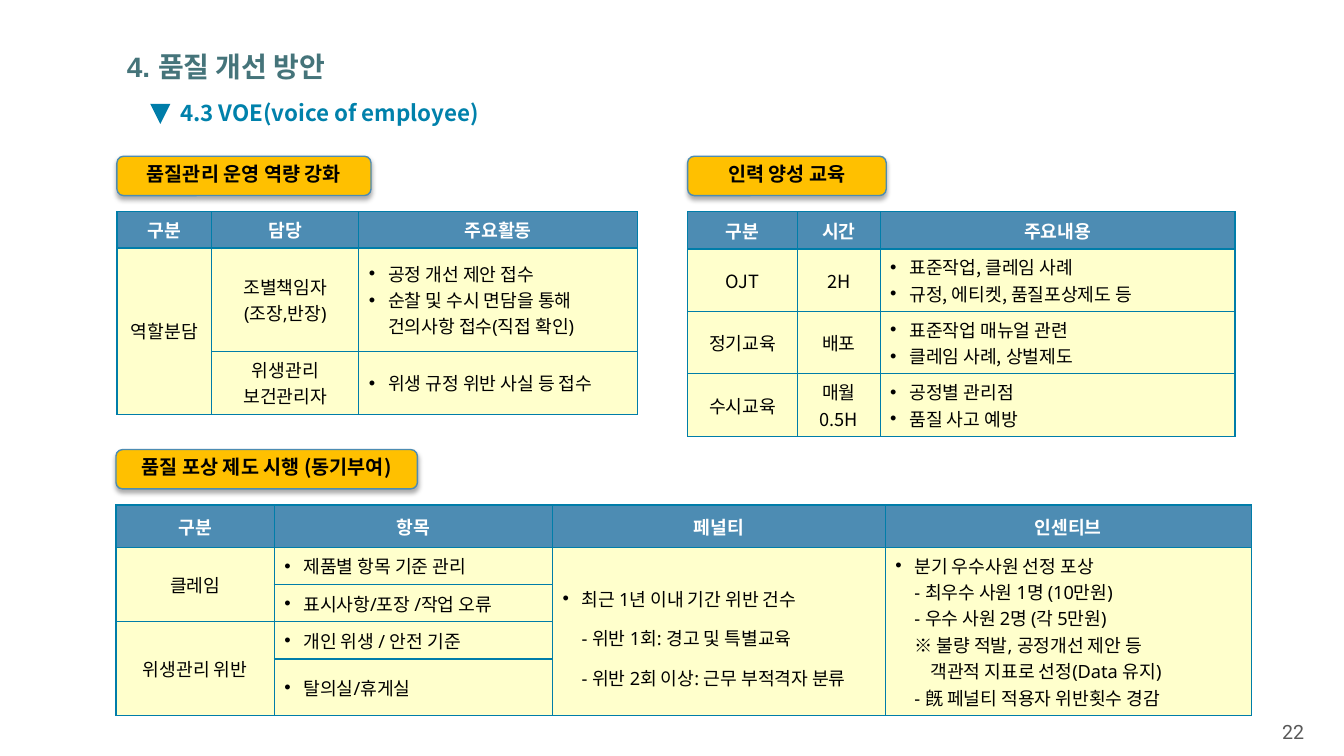
import pptx
import pptx.util
import pptx.dml.color
import pptx.enum.shapes
import pptx.enum.text
import pptx.oxml
import pptx.oxml.ns
import lxml.etree as etree

Inches = pptx.util.Inches
Pt = pptx.util.Pt
ALIGN = pptx.enum.text.PP_ALIGN
ANCHOR = pptx.enum.text.MSO_ANCHOR
SHAPE = pptx.enum.shapes.MSO_SHAPE
qn = pptx.oxml.ns.qn

COLORS = {
    "title": "45747A", "topic": "0081AB", "mark": "007DA9", "edge": "007DA9",
    "head": "4D8CB3", "body": "FFFFCC", "pill": "FFC000", "ink": "000000",
    "light": "FFFFFF", "page": "595959",
}
CJK = "Noto Sans CJK KR"
LATIN = "Noto Sans"
STEP = 0.19  # bullet indent
# Indents of the lines under a bullet, by their leading sign
LEVELS = {"•": STEP, ">": STEP, "»": 0.35}

DUTIES = [
    ["구분", "담당", "주요활동"],
    ["역할분담", "조별책임자\n(조장,반장)",
     "•공정 개선 제안 접수\n•순찰 및 수시 면담을 통해\v건의사항 접수(직접 확인)"],
    ["", "위생관리\n보건관리자", "•위생 규정 위반 사실 등 접수"],
]
COURSES = [
    ["구분", "시간", "주요내용"],
    ["OJT", "2H", "•표준작업, 클레임 사례\n•규정, 에티켓, 품질포상제도 등"],
    ["정기교육", "배포", "•표준작업 매뉴얼 관련\n•클레임 사례, 상벌제도"],
    ["수시교육", "매월\n0.5H", "•공정별 관리점\n•품질 사고 예방"],
]
AWARDS = [
    ["구분", "항목", "페널티", "인센티브"],
    ["클레임", "•제품별 항목 기준 관리",
     "•최근 1년 이내 기간 위반 건수\n>- 위반 1회: 경고 및 특별교육\n"
     ">- 위반 2회 이상: 근무 부적격자 분류",
     "•분기 우수사원 선정 포상\n>- 최우수 사원 1명 (10만원)\n"
     ">- 우수 사원 2명 (각 5만원)\n>※ 불량 적발, 공정개선 제안 등\n"
     "»객관적 지표로 선정(Data 유지)\n>- 旣 페널티 적용자 위반횟수 경감"],
    ["", "•표시사항/포장 /작업 오류", "", ""],
    ["위생관리 위반", "•개인 위생 / 안전 기준", "", ""],
    ["", "•탈의실/휴게실", "", ""],
]


def rgb(name):
    return pptx.dml.color.RGBColor.from_string(COLORS[name])


def style(para, size, color, font=CJK, bold=False):
    for run in para.runs:
        run.font.size = Pt(size)
        run.font.bold = bold
        run.font.name = font
        run.font.color.rgb = rgb(color)
        east = etree.SubElement(run.font._element, qn("a:ea"))
        east.set("typeface", CJK)


def label(slide, box, text, size, color, font=CJK, bold=False):
    """Add a text box with one line and return it."""
    shape = slide.shapes.add_textbox(*map(Inches, box))
    frame = shape.text_frame
    frame.word_wrap = True
    frame.text = text
    style(frame.paragraphs[0], size, color, font, bold)
    return shape


def heading(slide, box):
    left, top, width, height = box
    frame = label(slide, (left, top, width, 0.44), "4. 품질 개선 방안",
                  20, "title", "Arial", True).text_frame
    frame.vertical_anchor = ANCHOR.MIDDLE
    frame.paragraphs[0].line_spacing = 0.9
    mark = slide.shapes.add_shape(
        SHAPE.ISOSCELES_TRIANGLE, Inches(left + 0.33), Inches(top + 0.57),
        Inches(0.2), Inches(0.2))
    mark.rotation = 180
    mark.shadow.inherit = False
    mark.fill.solid()
    mark.fill.fore_color.rgb = rgb("mark")
    mark.line.fill.background()
    label(slide, (left + 0.53, top + 0.47, 8.74, 0.37),
          "4.3 VOE(voice of employee)", 16, "topic", CJK, True)


def pill(slide, box, text):
    shape = slide.shapes.add_shape(SHAPE.ROUNDED_RECTANGLE, *map(Inches, box))
    shape.shadow.inherit = False
    shape.fill.solid()
    shape.fill.fore_color.rgb = rgb("pill")
    shape.line.color.rgb = rgb("head")
    shape.line.width = Pt(1)
    effects = shape._element.spPr.find(qn("a:effectLst"))
    shade = etree.SubElement(effects, qn("a:outerShdw"), blurRad=str(Pt(3.5)),
                             dist=str(Pt(2.2)), dir="5400000", rotWithShape="0")
    tone = etree.SubElement(shade, qn("a:srgbClr"), val=COLORS["ink"])
    etree.SubElement(tone, qn("a:alpha"), val="32000")
    frame = shape.text_frame
    frame.word_wrap = True
    frame.vertical_anchor = ANCHOR.MIDDLE
    frame.text = text
    para = frame.paragraphs[0]
    para.alignment = ALIGN.CENTER
    para.line_spacing = Pt(13)
    style(para, 14, "ink", CJK, True)


def border(cell):
    props = cell._tc.get_or_add_tcPr()
    for i, side in enumerate(("lnL", "lnR", "lnT", "lnB")):
        line = etree.Element(qn("a:" + side), w=str(Pt(1)))
        fill = etree.SubElement(line, qn("a:solidFill"))
        etree.SubElement(fill, qn("a:srgbClr"), val=COLORS["edge"])
        props.insert(i, line)


def indent(para, sign):
    """Set the left indent, and the bullet where the sign is one."""
    props = para._p.get_or_add_pPr()
    props.set("marL", str(Inches(LEVELS[sign])))
    if sign == "•":
        props.set("indent", str(-Inches(STEP)))
        etree.SubElement(props, qn("a:buFont"), typeface="Arial")
        etree.SubElement(props, qn("a:buChar"), char=sign)


def write(cell, text, head, font, space):
    cell.fill.solid()
    cell.fill.fore_color.rgb = rgb("head" if head else "body")
    cell.vertical_anchor = ANCHOR.MIDDLE
    border(cell)
    cell.text_frame.text = text
    listed = text.startswith("•")
    for para, line in zip(cell.text_frame.paragraphs, text.split("\n")):
        if listed:
            para.text = line[1:]
            para.line_spacing = space
            indent(para, line[0])
        else:
            para.alignment = ALIGN.CENTER
        style(para, 13, "light" if head else "ink", font, head)


def grid(slide, box, data, cols, rows, spans=(), font=LATIN, wide=None):
    """Add a table; spans are (row, column, last row), wide a loose column."""
    table = slide.shapes.add_table(len(rows), len(cols),
                                   *map(Inches, box)).table
    for col, width in zip(table.columns, cols):
        col.width = Inches(width)
    for row, height in zip(table.rows, rows):
        row.height = Inches(height)
    for r, line in enumerate(data):
        for c, text in enumerate(line):
            space = 1.5 if c == wide else None
            write(table.cell(r, c), text, r == 0, font, space)
    for top, col, last in spans:
        table.cell(top, col).merge(table.cell(last, col))


def section(slide, box, title, width, *args, **options):
    """Place a pill of the given width and a table under it."""
    left, top, span, height = box
    pill(slide, (left, top, width, 0.39), title)
    grid(slide, (left, top + 0.55, span, height - 0.55), *args, **options)


def main():
    deck = pptx.Presentation()
    deck.slide_width = Inches(13.33)
    deck.slide_height = Inches(7.5)
    slide = deck.slides.add_slide(deck.slide_layouts[6])
    heading(slide, (1.16, 0.46, 11.35, 0.84))
    section(slide, (1.16, 1.55, 5.16, 2.56), "품질관리 운영 역량 강화", 2.52,
            DUTIES, [0.94, 1.46, 2.76], [0.36, 1.03, 0.62], [(1, 0, 2)])
    section(slide, (6.82, 1.55, 5.43, 2.78), "인력 양성 교육", 1.97,
            COURSES, [1.09, 0.82, 3.52], [0.37] + [0.62] * 3, font=CJK)
    section(slide, (1.15, 4.46, 11.26, 2.64), "품질 포상 제도 시행 (동기부여)",
            2.99, AWARDS, [1.57, 2.76, 3.3, 3.63], [0.42] + [0.37] * 3 + [0.56],
            [(1, 0, 2), (3, 0, 4), (1, 2, 4), (1, 3, 4)], wide=2)
    page = label(slide, (12.52, 7.09, 0.61, 0.34), "22", 14, "page", "Roboto")
    page.text_frame.paragraphs[0].alignment = ALIGN.CENTER
    deck.save("out.pptx")


if __name__ == "__main__":
    main()
